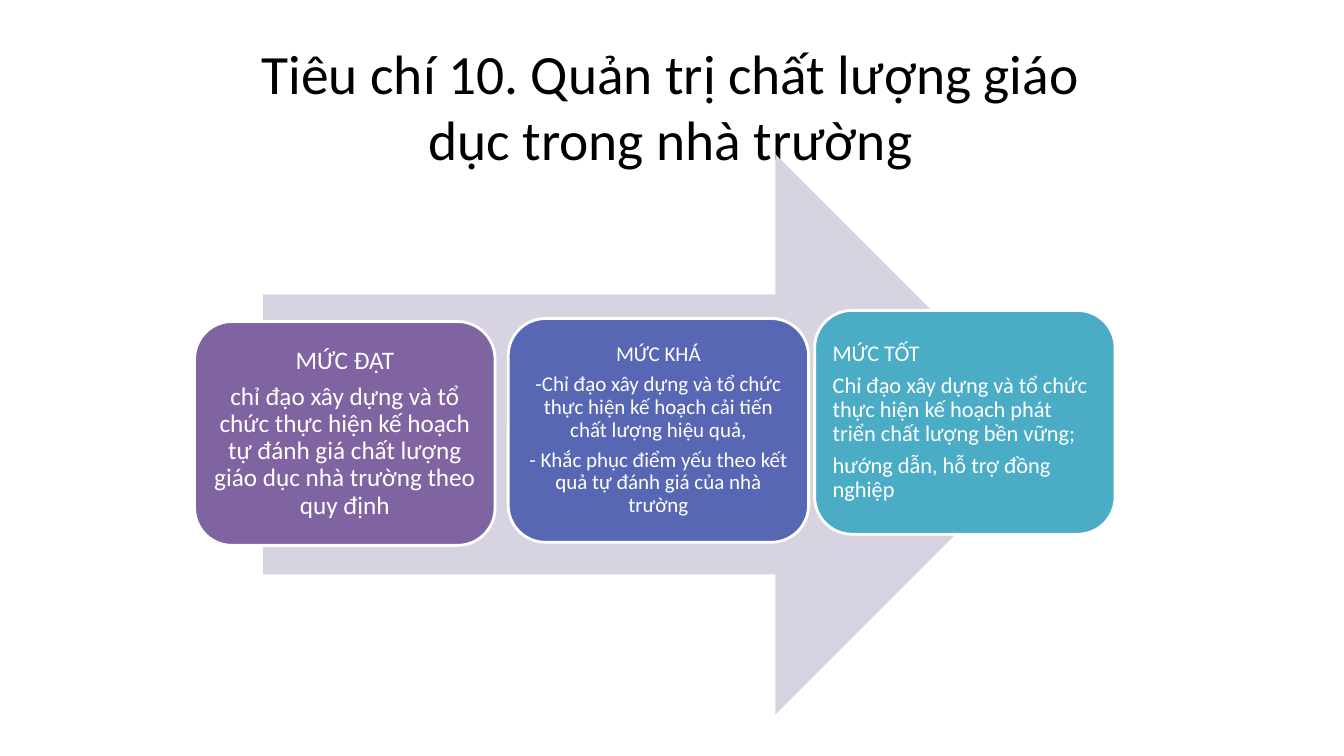
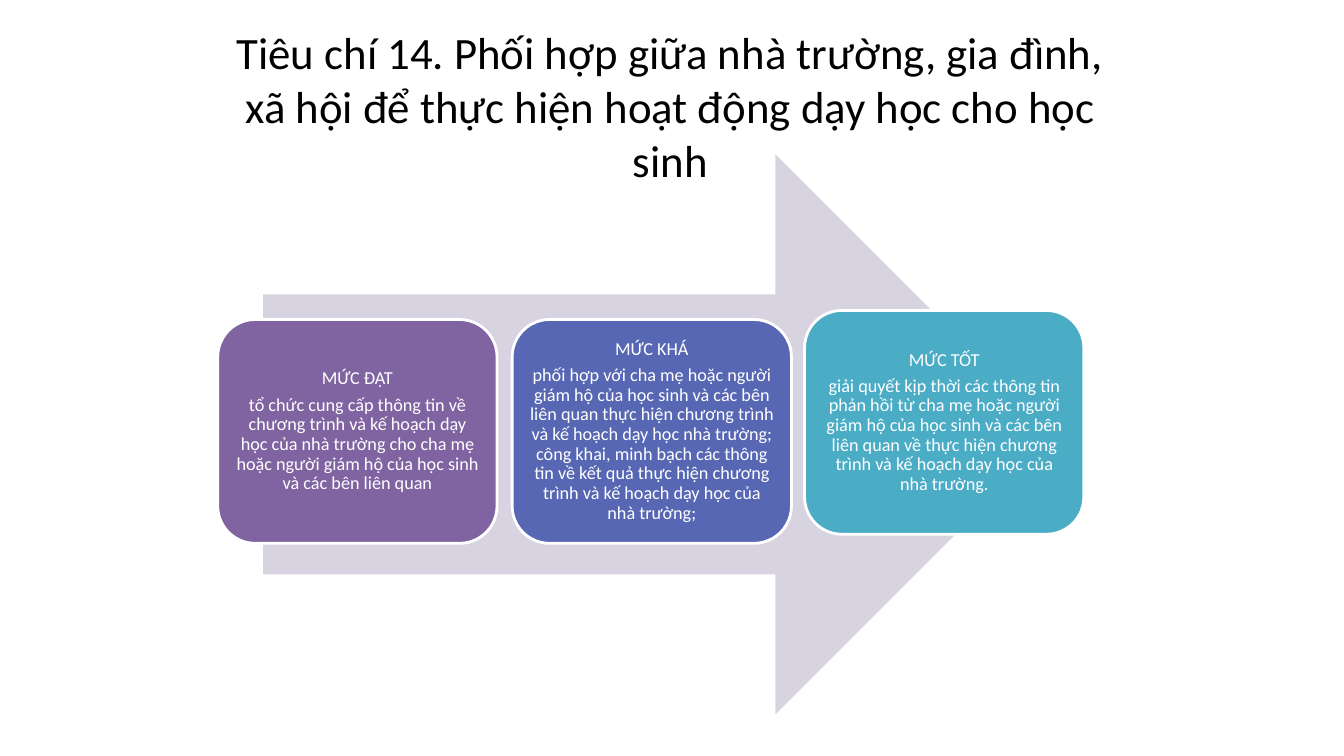
import dataclasses

import pptx
import pptx.dml.color
import pptx.enum.shapes
import pptx.enum.text
import pptx.util

RGBColor = pptx.dml.color.RGBColor
Shape = pptx.enum.shapes.MSO_SHAPE
Align = pptx.enum.text.PP_ALIGN
Pt = pptx.util.Pt

# Shared look
PX = 9144  # EMU in one px, 100 px to the inch
FONT = "Calibri"
BLACK = RGBColor(0x00, 0x00, 0x00)
WHITE = RGBColor(0xFF, 0xFF, 0xFF)
LILAC = RGBColor(0xD8, 0xD3, 0xE0)
LEVELS = (
    RGBColor(0x80, 0x64, 0xA2),
    RGBColor(0x57, 0x67, 0xB4),
    RGBColor(0x4B, 0xAC, 0xC6),
)
TITLE = (215, 42, 900, 125)
ARROW = (261, 153, 786, 556)
HIGH = 222  # height of a card


@dataclasses.dataclass(frozen=True)
class Card:
    left: int
    top: int
    size: int
    inset: int
    lines: tuple[str, ...]
    align: Align = Align.CENTER


@dataclasses.dataclass(frozen=True)
class Page:
    title: str
    size: float
    wide: int  # width of each card
    cards: tuple[Card, ...]


PAGES = (
    Page("Tiêu chí 10. Quản trị chất lượng giáo dục trong nhà trường", 39.6, 298, (
        Card(193, 319, 18, 7, (
            "MỨC ĐẠT",
            "chỉ đạo xây dựng và tổ chức thực hiện kế hoạch tự đánh giá "
            "chất lượng giáo dục nhà trường theo quy định",
        )),
        Card(504, 316, 15, 6, (
            "MỨC KHÁ",
            "-Chỉ đạo xây dựng và tổ chức thực hiện kế hoạch cải tiến "
            "chất lượng hiệu quả,",
            "- Khắc phục điểm yếu theo kết quả tự đánh giá của nhà trường",
        )),
        Card(808, 308, 16, 7, (
            "MỨC TỐT",
            "Chỉ đạo xây dựng và tổ chức thực hiện kế hoạch phát triển "
            "chất lượng bền vững;",
            "hướng dẫn, hỗ trợ đồng nghiệp",
        ), Align.LEFT),
    )),
    Page("Tiêu chí 14. Phối hợp giữa nhà trường, gia đình, xã hội "
         "để thực hiện hoạt động dạy học cho học sinh", 32, 277, (
        Card(216, 317, 13, 5, (
            "MỨC ĐẠT",
            "tổ chức cung cấp thông tin về chương trình và kế hoạch dạy học "
            "của nhà trường cho cha mẹ hoặc người giám hộ của học sinh "
            "và các bên liên quan",
        )),
        Card(508, 317, 13, 5, (
            "MỨC KHÁ",
            "phối hợp với cha mẹ hoặc người giám hộ của học sinh và các bên "
            "liên quan thực hiện chương trình và kế hoạch dạy học nhà trường; "
            "công khai, minh bạch các thông tin về kết quả thực hiện chương "
            "trình và kế hoạch dạy học của nhà trường;",
        )),
        Card(798, 308, 13, 5, (
            "MỨC TỐT",
            "giải quyết kịp thời các thông tin phản hồi từ cha mẹ hoặc người "
            "giám hộ của học sinh và các bên liên quan về thực hiện chương "
            "trình và kế hoạch dạy học của nhà trường.",
        )),
    )),
)


def write(frame, lines: tuple[str, ...], *, size: float, color: RGBColor,
          align: Align = Align.CENTER, pitch: float = 1.0, after: float = 0) -> None:
    """Fill a text frame, one paragraph a line."""
    frame.word_wrap = True
    frame.auto_size = pptx.enum.text.MSO_AUTO_SIZE.NONE
    frame.vertical_anchor = pptx.enum.text.MSO_ANCHOR.MIDDLE
    for i, line in enumerate(lines):
        para = frame.paragraphs[0] if i == 0 else frame.add_paragraph()
        para.alignment = align
        para.line_spacing = pitch
        para.space_before = Pt(0)
        para.space_after = Pt(after)
        run = para.add_run()
        run.text = line
        run.font.name = FONT
        run.font.size = Pt(size)
        run.font.color.rgb = color


def block(slide, kind: Shape, box: tuple[int, int, int, int], fill: RGBColor):
    """Add a flat shape with no outline."""
    shape = slide.shapes.add_shape(kind, *(n * PX for n in box))
    shape.shadow.inherit = False
    shape.fill.solid()
    shape.fill.fore_color.rgb = fill
    shape.line.fill.background()
    return shape


def draw_card(slide, card: Card, wide: int, fill: RGBColor) -> None:
    box = (card.left, card.top, wide, HIGH)
    shape = block(slide, Shape.ROUNDED_RECTANGLE, box, fill)
    shape.line.color.rgb = WHITE
    shape.line.width = Pt(2)
    frame = shape.text_frame
    frame.margin_left = frame.margin_right = card.inset * PX
    frame.margin_top = frame.margin_bottom = card.inset * PX
    write(frame, card.lines, size=card.size, color=WHITE, align=card.align,
          pitch=0.9, after=0.35 * card.size)


def draw_page(deck, page: Page) -> None:
    slide = deck.slides.add_slide(deck.slide_layouts[5])
    # Title
    title = slide.shapes.title
    title.left, title.top, title.width, title.height = (n * PX for n in TITLE)
    write(title.text_frame, (page.title,), size=page.size, color=BLACK)
    # Arrow with the three levels on it
    block(slide, Shape.RIGHT_ARROW, ARROW, LILAC)
    for card, fill in zip(page.cards, LEVELS):
        draw_card(slide, card, page.wide, fill)


def main() -> None:
    deck = pptx.Presentation()
    deck.slide_width, deck.slide_height = 1333 * PX, 750 * PX
    for page in PAGES:
        draw_page(deck, page)
    deck.save("out.pptx")


if __name__ == "__main__":
    main()
